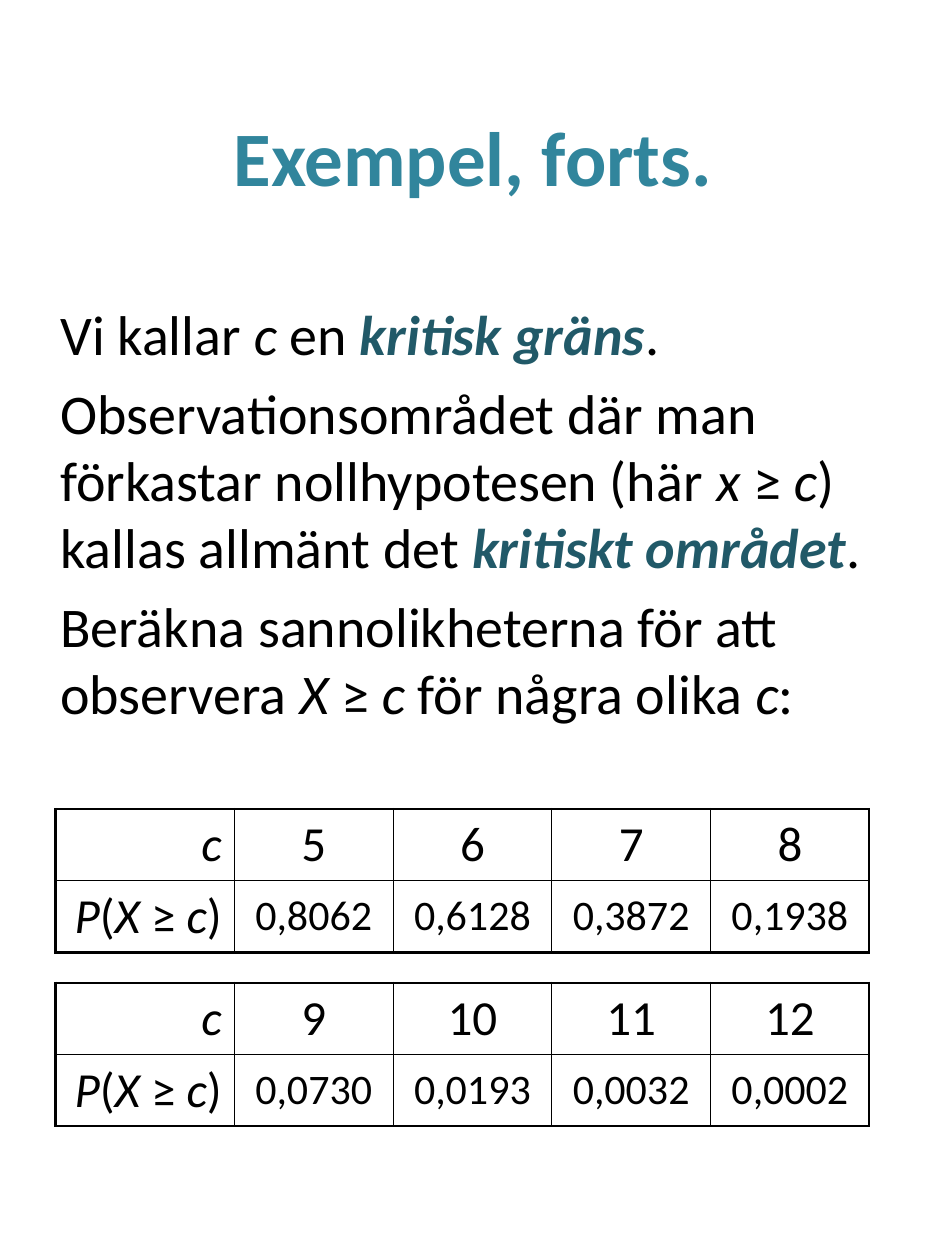
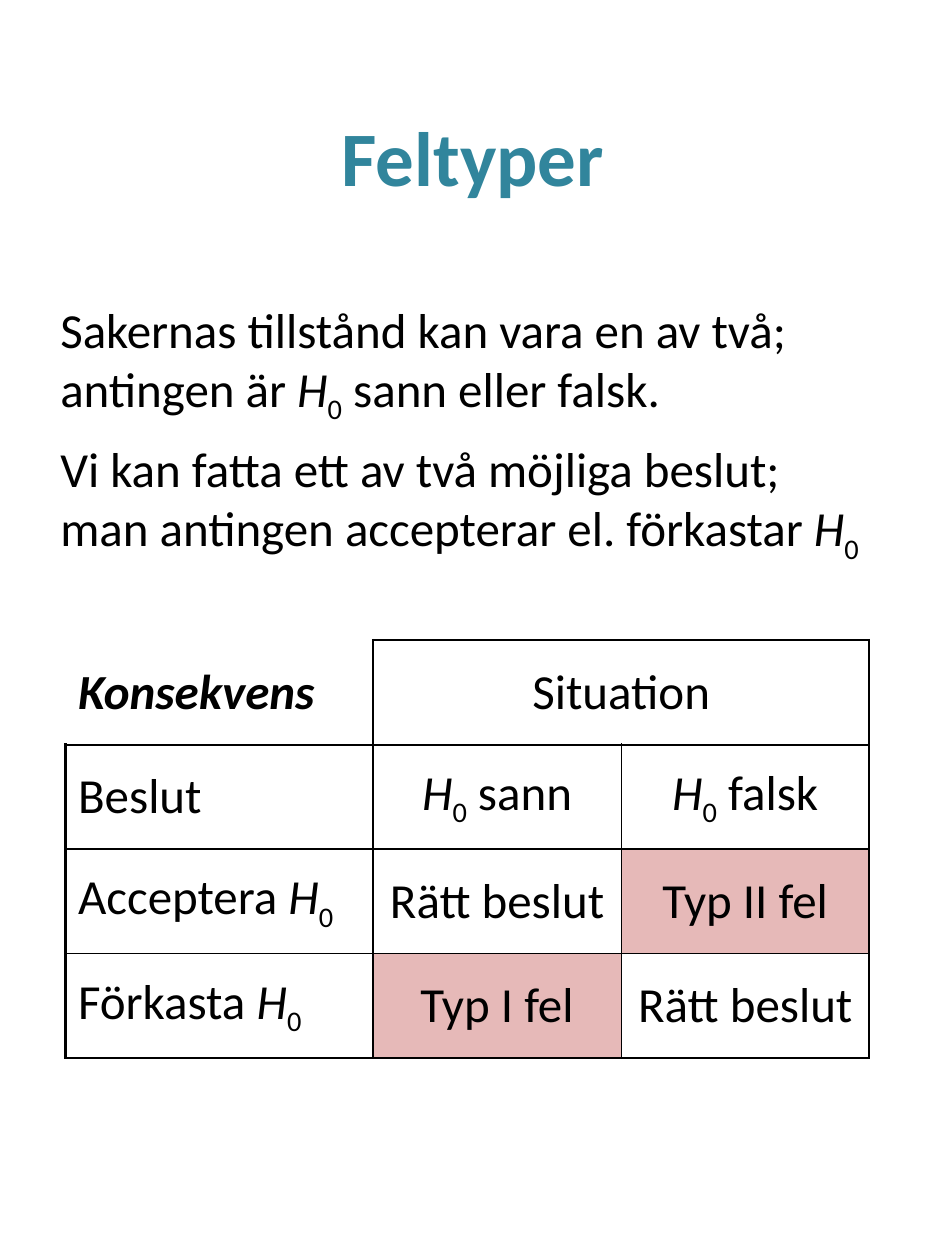
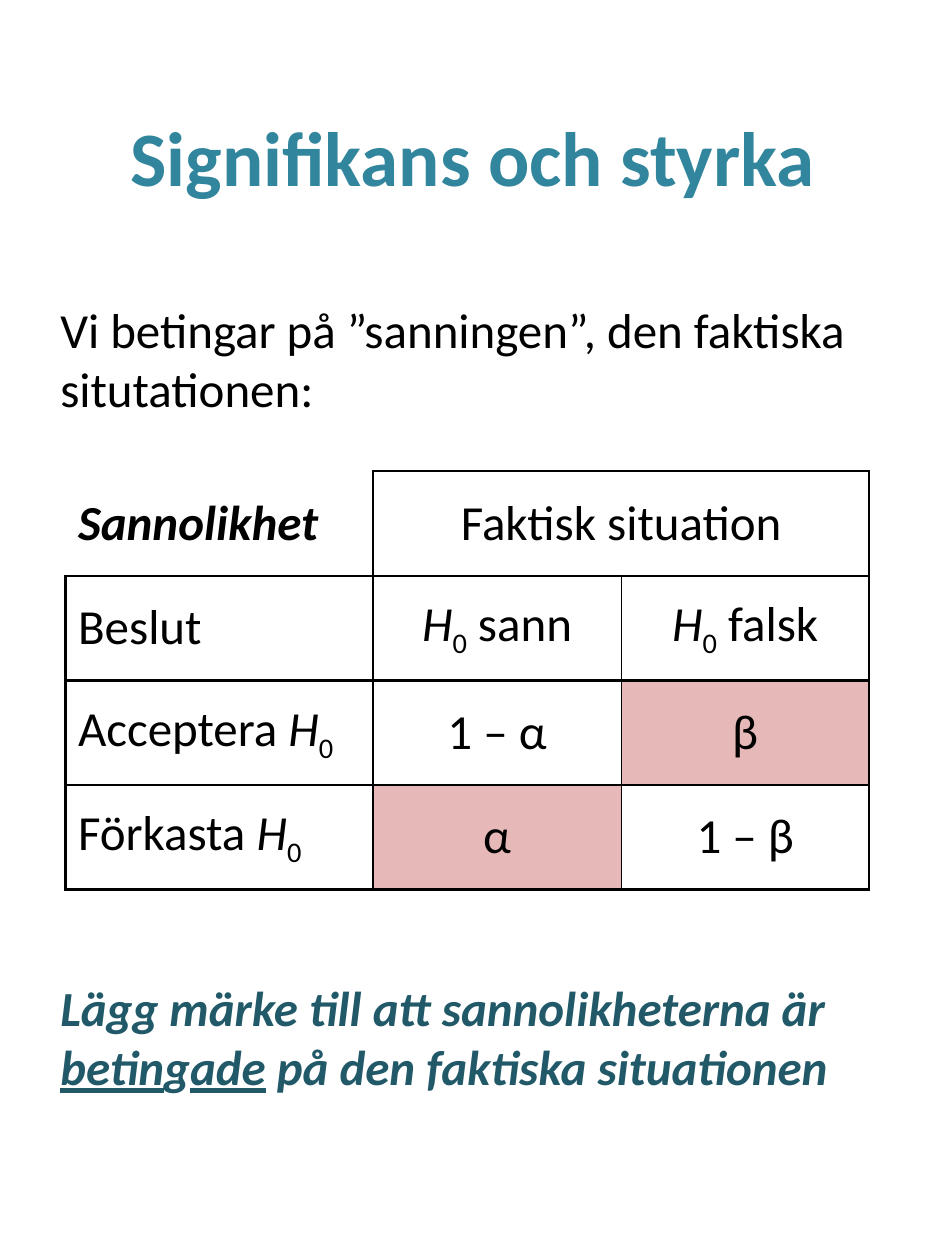
from lxml import etree
from pptx import Presentation
from pptx import util as u
from pptx.dml import color
from pptx.enum import text
from pptx.oxml import ns

FONT = "Calibri"
BLACK, WHITE, TEAL, DARK_TEAL, ROSE = "000000", "FFFFFF", "31859C", "215968", "E6B9B8"
TITLE_BOX = (0.38, 0.4, 6.75, 1.67)
BODY_BOX = (0.38, 2.33, 6.75, 7.16)
THICK, THIN = 1.5, 0.75
LEFT, CENTER, RIGHT = text.PP_ALIGN.LEFT, text.PP_ALIGN.CENTER, text.PP_ALIGN.RIGHT

ITALIC = {"italic": True}
STRONG = {"bold": True, "italic": True}
TERM = {**STRONG, "hue": DARK_TEAL}
UNDERLINED = {**TERM, "underline": True}
SUBSCRIPT = {"baseline": -25000}

C, X_ITALIC = ("c", ITALIC), ("X", ITALIC)
H0 = [("H", ITALIC), ("0", SUBSCRIPT)]
PROBABILITY = [("P", ITALIC), "(", X_ITALIC, " ≥ ", C, ")"]


def rgb(hue):
    """Turn a hex string into a colour."""
    return color.RGBColor.from_string(hue)


def write(paragraph, runs, size, align=LEFT, **base):
    """Fill a paragraph with plain strings and (string, format) pairs."""
    paragraph.alignment = align
    for part in runs:
        words, extra = (part, {}) if isinstance(part, str) else part
        look = {"name": FONT, "size": u.Pt(size), "bold": False, "italic": False,
                "hue": BLACK, **base, **extra}
        run = paragraph.add_run()
        run.text = words
        run.font.color.rgb = rgb(look.pop("hue"))
        if "baseline" in look:
            run.font._element.set("baseline", str(look.pop("baseline")))
        for key, value in look.items():
            setattr(run.font, key, value)


def add_frame(slide, box, anchor):
    """Add a wrapping text box and return its text frame."""
    frame = slide.shapes.add_textbox(*map(u.Inches, box)).text_frame
    frame.word_wrap = True
    frame.vertical_anchor = anchor
    return frame


def add_title(slide, heading, box=TITLE_BOX):
    """Add the centred slide title."""
    frame = add_frame(slide, box, text.MSO_ANCHOR.MIDDLE)
    write(frame.paragraphs[0], [heading], 44, CENTER, bold=True, hue=TEAL)


def add_body(slide, size, spacing, paragraphs, box=BODY_BOX):
    """Add the body paragraphs, with the given space between them."""
    frame = add_frame(slide, box, text.MSO_ANCHOR.TOP)
    frame.margin_right = u.Inches(0.2)
    for index, runs in enumerate(paragraphs):
        paragraph = frame.add_paragraph() if index else frame.paragraphs[0]
        if index:
            paragraph.space_before = u.Pt(spacing)
        write(paragraph, runs, size)


def set_border(cell, side, weight):
    """Draw one side of a cell, or leave it open when there is no weight."""
    line = etree.SubElement(cell._tc.get_or_add_tcPr(), ns.qn(f"a:ln{side}"))
    if not weight:
        etree.SubElement(line, ns.qn("a:noFill"))
        return
    line.set("w", str(u.Pt(weight)))
    fill = etree.SubElement(line, ns.qn("a:solidFill"))
    etree.SubElement(fill, ns.qn("a:srgbClr"), val=BLACK)


def add_grid(slide, left, top, widths, heights, verticals, horizontals, open_sides, merged=()):
    """Add a white table ruled by the weights of its grid lines."""
    frame = slide.shapes.add_table(len(heights), len(widths), u.Inches(left), u.Inches(top),
                                   u.Inches(sum(widths)), u.Inches(sum(heights)))
    table = frame.table
    table.first_row = table.horz_banding = False
    for column, width in zip(table.columns, widths):
        column.width = u.Inches(width)
    for row, height in zip(table.rows, heights):
        row.height = u.Inches(height)
    for first, last in merged:
        table.cell(*first).merge(table.cell(*last))
    for r in range(len(heights)):
        for c in range(len(widths)):
            cell = table.cell(r, c)
            weights = {"L": verticals[c], "R": verticals[c + cell.span_width],
                       "T": horizontals[r], "B": horizontals[r + 1]}
            for side, weight in weights.items():
                set_border(cell, side, 0 if side in open_sides.get((r, c), "") else weight)
            cell.fill.solid()
            cell.fill.fore_color.rgb = rgb(WHITE)
            cell.vertical_anchor = text.MSO_ANCHOR.MIDDLE
    return table


def add_probabilities(slide, left, top, blocks):
    """Add two blocks of limits and their probabilities, parted by a narrow row."""
    widths, gap_row = [1.42] + [1.26] * 4, 2
    table = add_grid(slide, left, top, widths, [0.57, 0.57, 0.24, 0.57, 0.57],
                     [THICK] + [THIN] * 4 + [THICK],
                     [THICK, THIN, THICK, THICK, THIN, THICK],
                     {(gap_row, c): "LR" for c in range(len(widths))})
    for cell in table.rows[gap_row].cells:
        cell.margin_top = cell.margin_bottom = 0
        etree.SubElement(cell.text_frame.paragraphs[0]._p, ns.qn("a:endParaRPr"), sz="800")
    for block, (limits, chances) in enumerate(blocks):
        for offset, (label, values, size) in enumerate([([C], limits, 28),
                                                        (PROBABILITY, chances, 24)]):
            cells = table.rows[block * 3 + offset].cells
            for c, cell in enumerate(cells):
                paragraph = cell.text_frame.paragraphs[0]
                if c:
                    write(paragraph, [values[c - 1]], size, CENTER)
                else:
                    write(paragraph, label, 28, RIGHT)


def add_decisions(slide, left, top, corner, situation, outcomes):
    """Add the table of decisions against situations, with the errors tinted."""
    table = add_grid(slide, left, top, [2.44, 1.97, 1.97], [0.83] * 4,
                     [THICK, THICK, THIN, THICK], [THICK, THICK, THICK, THIN, THICK],
                     {(0, 0): "LT", (0, 2): "L"}, [((0, 1), (0, 2))])
    rows = [[[(corner, STRONG)], [situation]],
            [["Beslut"], H0 + [" sann"], H0 + [" falsk"]],
            [["Acceptera ", *H0], *[[outcome] for outcome in outcomes[0]]],
            [["Förkasta ", *H0], *[[outcome] for outcome in outcomes[1]]]]
    for r, row in enumerate(rows):
        for c, runs in enumerate(row):
            write(table.cell(r, c).text_frame.paragraphs[0], runs, 28, CENTER if c else LEFT)
    for error in [(2, 2), (3, 1)]:
        table.cell(*error).fill.fore_color.rgb = rgb(ROSE)


def critical_limit_slide(slide):
    """Define the critical limit and list its probabilities."""
    add_title(slide, "Exempel, forts.")
    add_body(slide, 32, 6.4, [
        ["Vi kallar ", C, " en ", ("kritisk gräns", TERM), "."],
        ["Observationsområdet där man förkastar nollhypotesen (här ", ("x", ITALIC), " ≥ ", C,
         ") kallas allmänt det ", ("kritiskt området", TERM), "."],
        ["Beräkna sannolikheterna för att observera ", X_ITALIC, " ≥ ", C,
         " för några olika ", C, ":"]])
    add_probabilities(slide, 0.44, 6.42, [
        (["5", "6", "7", "8"], ["0,8062", "0,6128", "0,3872", "0,1938"]),
        (["9", "10", "11", "12"], ["0,0730", "0,0193", "0,0032", "0,0002"])])


def error_types_slide(slide):
    """Show the consequences of each decision."""
    add_title(slide, "Feltyper")
    add_body(slide, 28, 7.7, [
        ["Sakernas tillstånd kan vara en av två; antingen är ", *H0, " sann eller falsk."],
        ["Vi kan fatta ett av två möjliga beslut; man antingen accepterar el. förkastar ", *H0]])
    add_decisions(slide, 0.52, 5.08, "Konsekvens", "Situation",
                  [("Rätt beslut", "Typ II fel"), ("Typ I fel", "Rätt beslut")])


def power_slide(slide):
    """Show the probability of each decision."""
    add_title(slide, "Signifikans och styrka")
    add_body(slide, 28, 320, [
        ["Vi betingar på ”sanningen”, den faktiska situtationen:"],
        [("Lägg märke till att sannolikheterna är ", TERM), ("betin", UNDERLINED), ("g", TERM),
         ("ade", UNDERLINED), (" på den faktiska situationen", TERM)]])
    add_decisions(slide, 0.52, 3.74, "Sannolikhet", "Faktisk situation",
                  [("1 – α", "β"), ("α", "1 – β")])


def main():
    """Build and save the presentation."""
    deck = Presentation()
    deck.slide_width, deck.slide_height = u.Inches(7.5), u.Inches(10)
    for build in (critical_limit_slide, error_types_slide, power_slide):
        build(deck.slides.add_slide(deck.slide_layouts[6]))
    deck.save("out.pptx")


if __name__ == "__main__":
    main()
